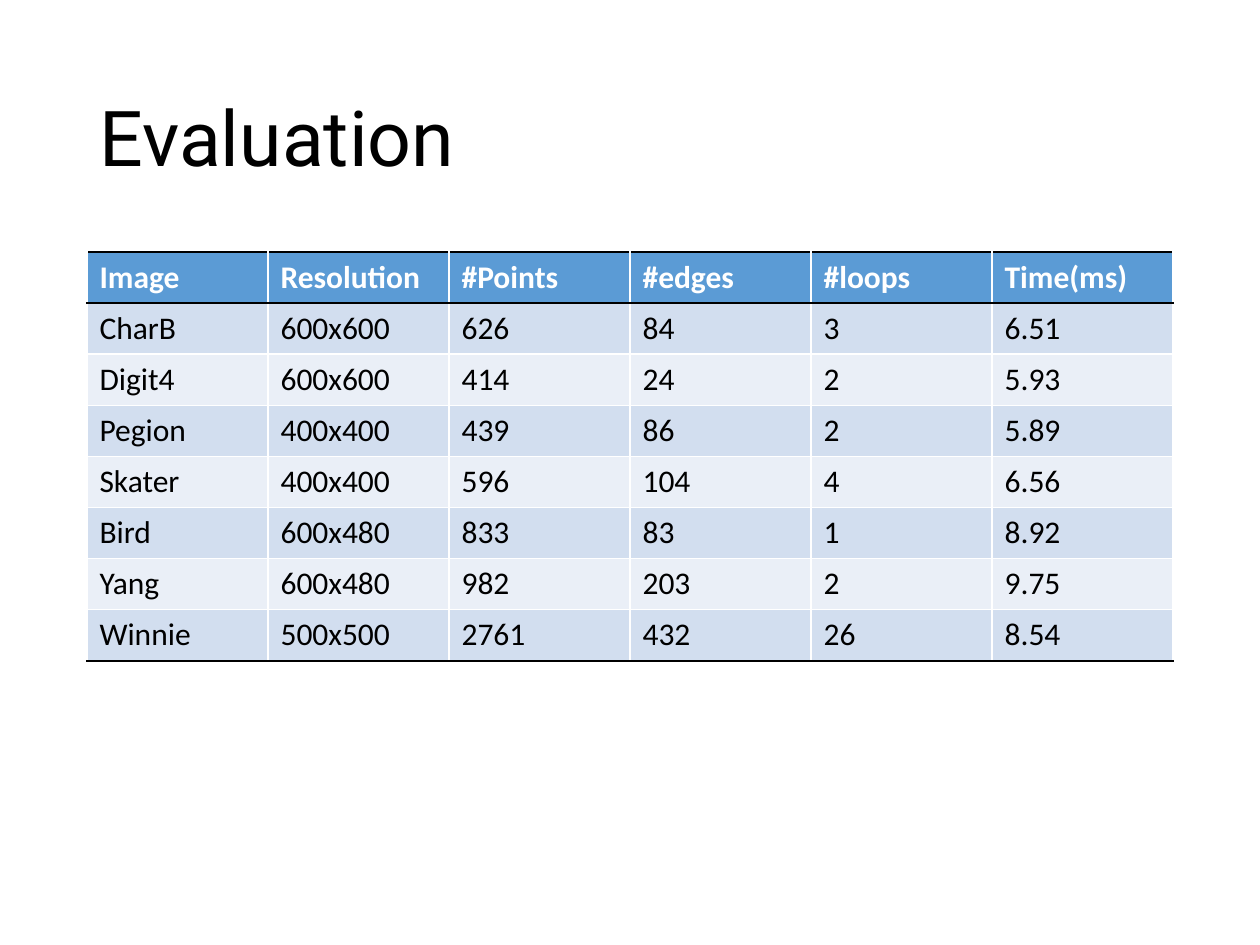
from lxml import etree
from pptx import Presentation
from pptx.dml.color import RGBColor
from pptx.enum.text import MSO_ANCHOR, PP_ALIGN
from pptx.oxml.ns import qn
from pptx.util import Inches, Pt

LEFT = PP_ALIGN.LEFT
MIDDLE = MSO_ANCHOR.MIDDLE
TITLE_ONLY = 5

BLACK = RGBColor(0x00, 0x00, 0x00)
WHITE = RGBColor(0xFF, 0xFF, 0xFF)
HEADER_BLUE = RGBColor(0x5B, 0x9B, 0xD5)
BAND_DARK = RGBColor(0xD2, 0xDE, 0xEF)
BAND_LIGHT = RGBColor(0xEA, 0xEF, 0xF7)

TITLE_FONT = {"name": "Roboto", "size": Pt(44), "bold": False}
HEADER_FONT = {"name": "Calibri", "size": Pt(18), "bold": True}
BODY_FONT = {"name": "Calibri", "size": Pt(18), "bold": False}

CONTENT_LEFT = Inches(0.69)
CONTENT_WIDTH = Inches(8.62)
ROW_HEIGHT = Inches(0.405)

RESULTS = [
    ("Image", "Resolution", "#Points", "#edges", "#loops", "Time(ms)"),
    ("CharB", "600x600", "626", "84", "3", "6.51"),
    ("Digit4", "600x600", "414", "24", "2", "5.93"),
    ("Pegion", "400x400", "439", "86", "2", "5.89"),
    ("Skater", "400x400", "596", "104", "4", "6.56"),
    ("Bird", "600x480", "833", "83", "1", "8.92"),
    ("Yang", "600x480", "982", "203", "2", "9.75"),
    ("Winnie", "500x500", "2761", "432", "26", "8.54"),
]


def write_text(text_frame, text, font_format, color):
    paragraph = text_frame.paragraphs[0]
    paragraph.alignment = LEFT
    run = paragraph.add_run()
    run.text = text
    for attribute, value in font_format.items():
        setattr(run.font, attribute, value)
    run.font.color.rgb = color
    return paragraph


def set_title(slide, text):
    title = slide.shapes.title
    placement = {"left": CONTENT_LEFT, "top": Inches(0.4),
                 "width": CONTENT_WIDTH, "height": Inches(1.45)}
    for attribute, value in placement.items():
        setattr(title, attribute, value)
    title.text_frame.vertical_anchor = MIDDLE
    write_text(title.text_frame, text, TITLE_FONT, BLACK).line_spacing = 0.9


def set_borders(cell, top, bottom):
    """Draw 1 pt borders: white sides, given colours above and below.

    Call before filling the cell, as border elements must precede the fill.
    """
    properties = cell._tc.get_or_add_tcPr()
    for side, color in (("L", WHITE), ("R", WHITE), ("T", top), ("B", bottom)):
        line = etree.SubElement(properties, qn(f"a:ln{side}"), w=str(Pt(1)))
        fill = etree.SubElement(line, qn("a:solidFill"))
        etree.SubElement(fill, qn("a:srgbClr"), val=str(color))


def add_results_table(slide, rows):
    """Add a banded table with black rules around the header and at the end."""
    column_count = len(rows[0])
    last = len(rows) - 1
    table = slide.shapes.add_table(
        len(rows), column_count, CONTENT_LEFT, Inches(2),
        CONTENT_WIDTH, ROW_HEIGHT * len(rows)).table
    for column in table.columns:
        column.width = CONTENT_WIDTH // column_count

    for row_index, values in enumerate(rows):
        table.rows[row_index].height = ROW_HEIGHT
        is_header = row_index == 0
        band = BAND_DARK if row_index % 2 else BAND_LIGHT
        for column_index, value in enumerate(values):
            cell = table.cell(row_index, column_index)
            set_borders(cell,
                        top=BLACK if row_index in (0, 1) else WHITE,
                        bottom=BLACK if row_index in (0, last) else WHITE)
            cell.fill.solid()
            cell.fill.fore_color.rgb = HEADER_BLUE if is_header else band
            write_text(cell.text_frame, value,
                       HEADER_FONT if is_header else BODY_FONT,
                       WHITE if is_header else BLACK)


def main():
    presentation = Presentation()
    presentation.slide_width = Inches(10)
    presentation.slide_height = Inches(7.5)
    slide = presentation.slides.add_slide(presentation.slide_layouts[TITLE_ONLY])
    set_title(slide, "Evaluation")
    add_results_table(slide, RESULTS)
    presentation.save("out.pptx")


if __name__ == "__main__":
    main()
